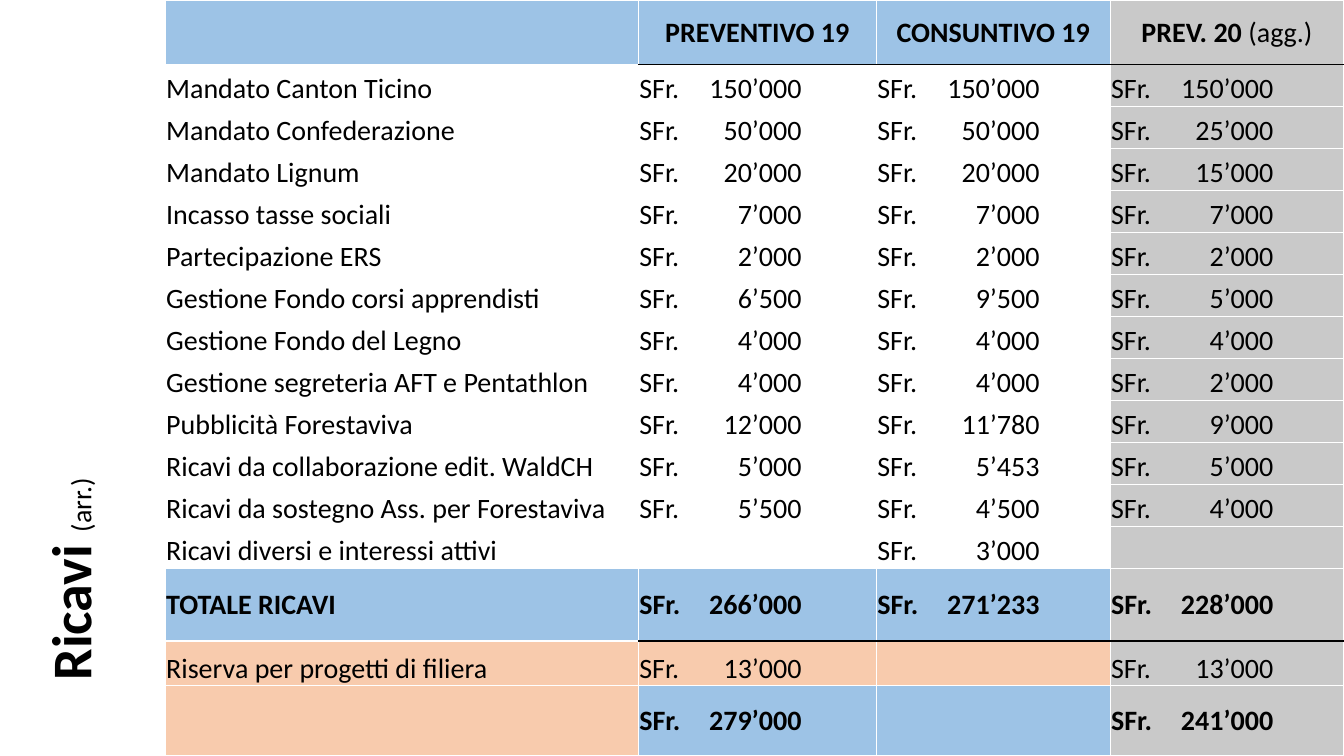
from lxml.etree import SubElement
from pptx import Presentation
from pptx.dml.color import RGBColor
from pptx.enum.text import MSO_ANCHOR, MSO_AUTO_SIZE, PP_ALIGN
from pptx.oxml.ns import qn
from pptx.util import Pt

BLUE, GRAY, PEACH = "9DC3E6", "C9C9C9", "F8CBAD"
BLACK, WHITE = "000000", "FFFFFF"


def color(value):
    return RGBColor.from_string(value)


def style(font, size, bold):
    font.name = "Calibri"
    font.size = Pt(size)
    font.bold = bold
    font.color.rgb = color(BLACK)


income = [
    ("Mandato Canton Ticino", "150’000", "150’000", "150’000"),
    ("Mandato Confederazione", "50’000", "50’000", "25’000"),
    ("Mandato Lignum", "20’000", "20’000", "15’000"),
    ("Incasso tasse sociali", "7’000", "7’000", "7’000"),
    ("Partecipazione ERS", "2’000", "2’000", "2’000"),
    ("Gestione Fondo corsi apprendisti", "6’500", "9’500", "5’000"),
    ("Gestione Fondo del Legno", "4’000", "4’000", "4’000"),
    ("Gestione segreteria AFT e Pentathlon", "4’000", "4’000", "2’000"),
    ("Pubblicità Forestaviva", "12’000", "11’780", "9’000"),
    ("Ricavi da collaborazione edit. WaldCH", "5’000", "5’453", "5’000"),
    ("Ricavi da sostegno Ass. per Forestaviva", "5’500", "4’500", "4’000"),
    ("Ricavi diversi e interessi attivi", "", "3’000", ""),
]
rows = [
    ("", "PREVENTIVO 19", "CONSUNTIVO 19", "PREV. 20 "),
    *income,
    ("TOTALE RICAVI", "266’000", "271’233", "228’000"),
    ("Riserva per progetti di filiera", "13’000", "", "13’000"),
    ("", "279’000", "", "241’000"),
]
row_heights = [46] + [30] * len(income) + [52, 32, 50]
column_widths = [338, 170, 167, 167]
total_row = len(income) + 1
reserve_row = total_row + 1
final_row = total_row + 2
strong_rows = (0, total_row, final_row)
row_fills = {
    0: [BLUE] * 3,
    total_row: [BLUE] * 3,
    reserve_row: [PEACH] * 3,
    final_row: [PEACH, BLUE, BLUE],
}

presentation = Presentation()
presentation.slide_width = Pt(960)
presentation.slide_height = Pt(540)
slide = presentation.slides.add_slide(presentation.slide_layouts[5])

title = slide.shapes.title
title.left, title.top, title.width, title.height = Pt(-319.7), Pt(96.5), Pt(738), Pt(55.4)
title.rotation = 270
title.text_frame.auto_size = MSO_AUTO_SIZE.NONE
title.text_frame.vertical_anchor = MSO_ANCHOR.TOP
heading = title.text_frame.paragraphs[0]
heading.alignment = PP_ALIGN.LEFT
for text, size, bold in [("Ricavi ", 40, True), ("(arr.)", 20, False)]:
    run = heading.add_run()
    run.text = text
    style(run.font, size, bold)

table = slide.shapes.add_table(
    len(rows), len(column_widths), Pt(118), Pt(0), Pt(sum(column_widths)), Pt(sum(row_heights))
).table
table.first_row = False
table.horz_banding = False
for column, width in zip(table.columns, column_widths):
    column.width = Pt(width)

for row_index, (values, height) in enumerate(zip(rows, row_heights)):
    table.rows[row_index].height = Pt(height)
    strong = row_index in strong_rows
    fills = row_fills.get(row_index, [None] * 3) + [GRAY]
    for column_index, (value, fill) in enumerate(zip(values, fills)):
        cell = table.cell(row_index, column_index)
        cell.margin_left = cell.margin_right = cell.margin_top = Pt(0.7)
        cell.margin_bottom = Pt(0)
        cell.vertical_anchor = MSO_ANCHOR.MIDDLE if strong else MSO_ANCHOR.BOTTOM

        black_sides = []
        if column_index > 0 and row_index in (0, total_row):
            black_sides.append("lnB")
        if column_index > 0 and row_index in (1, reserve_row):
            black_sides.append("lnT")
        properties = cell._tc.get_or_add_tcPr()
        for side in ("lnL", "lnR", "lnT", "lnB"):
            line = SubElement(properties, qn(f"a:{side}"), w=str(Pt(1)))
            line_fill = SubElement(line, qn("a:solidFill"))
            line_color = BLACK if side in black_sides else WHITE
            SubElement(line_fill, qn("a:srgbClr"), val=line_color)
        if fill:
            cell.fill.solid()
            cell.fill.fore_color.rgb = color(fill)
        else:
            cell.fill.background()

        paragraph = cell.text_frame.paragraphs[0]
        if row_index == 0:
            paragraph.alignment = PP_ALIGN.CENTER
        elif column_index > 0 and value:
            value = f"SFr.\t{value}"
            tabs = SubElement(paragraph._p.get_or_add_pPr(), qn("a:tabLst"))
            SubElement(tabs, qn("a:tab"), pos=str(Pt(116)), algn="r")
        paragraph.text = value
        style(paragraph.font, 20, strong)
        for run in paragraph.runs:
            style(run.font, 20, strong)

update_note = table.cell(0, 3).text_frame.paragraphs[0].add_run()
update_note.text = "(agg.)"
style(update_note.font, 20, False)

presentation.save("out.pptx")
